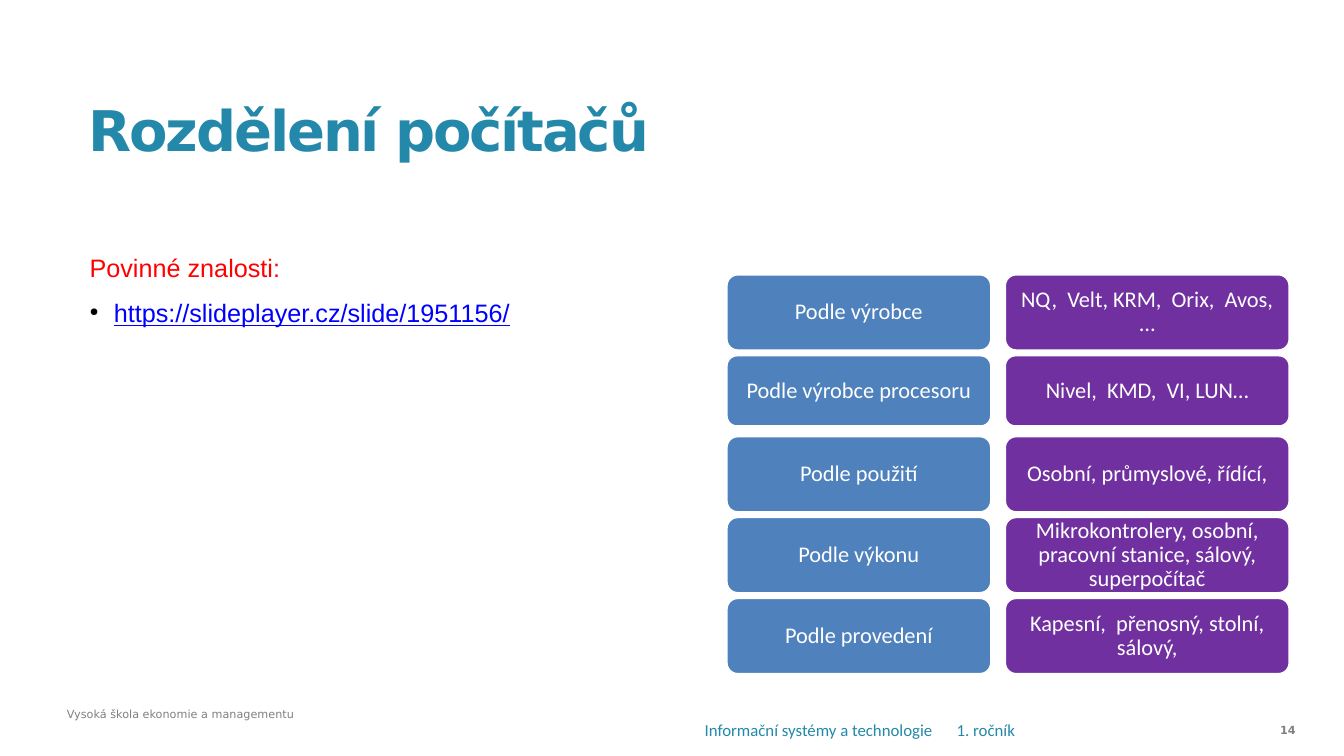
from dataclasses import dataclass

from lxml.etree import SubElement
from pptx import Presentation
from pptx.dml.color import RGBColor
from pptx.enum.shapes import MSO_SHAPE
from pptx.enum.text import MSO_ANCHOR, PP_ALIGN
from pptx.oxml.ns import qn
from pptx.util import Inches, Pt

WIDTH, HEIGHT = Inches(13.33), Inches(7.5)


@dataclass(frozen=True)
class Theme:
    teal: str = "2388A9"
    gray: str = "808080"
    red: str = "FF0000"
    link: str = "0000FF"
    black: str = "000000"
    white: str = "FFFFFF"
    blue: str = "4F81BD"
    purple: str = "7030A0"
    head: str = "DejaVu Sans"
    body: str = "Arial"
    label: str = "Calibri"
    title: int = 40
    text: int = 18
    card: int = 16
    footer: int = 12
    small: int = 8


THEME = Theme()

# Share of the slide height taken by the row, criterion, examples
ROWS = [
    (10.13, "Podle výrobce", "NQ,  Velt, KRM,  Orix,  Avos, …"),
    (9.47, "Podle výrobce procesoru", "Nivel,  KMD,  VI, LUN…"),
    (10.13, "Podle použití", "Osobní, průmyslové, řídící,"),
    (10.13, "Podle výkonu",
     "Mikrokontrolery, osobní, pracovní stanice, sálový, superpočítač"),
    (10.13, "Podle provedení", "Kapesní,  přenosný, stolní, sálový,"),
]
TOP, STEP = 36.27, 10.7


def place(left, top, width, height):
    """Turn percentages of the slide into lengths."""
    return (int(WIDTH * left / 100), int(HEIGHT * top / 100),
            int(WIDTH * width / 100), int(HEIGHT * height / 100))


def style(para, face, size, color, bold=False, align=PP_ALIGN.LEFT, lead=None):
    para.alignment = align
    if lead:
        para.line_spacing = lead
    for run in para.runs:
        run.font.name = face
        run.font.size = Pt(size)
        run.font.bold = bold
        run.font.color.rgb = RGBColor.from_string(color)


def add_text(slide, area, text, anchor=MSO_ANCHOR.MIDDLE, wrap=True):
    frame = slide.shapes.add_textbox(*place(*area)).text_frame
    frame.word_wrap = wrap
    frame.vertical_anchor = anchor
    frame.text = text
    return frame


def add_bullet(para, color):
    props = para._p.get_or_add_pPr()
    indent = Inches(0.24)
    props.set("marL", str(indent))
    props.set("indent", str(-indent))
    tint = SubElement(props, qn("a:buClr"))
    SubElement(tint, qn("a:srgbClr"), val=color)
    SubElement(props, qn("a:buSzPct"), val="45000")
    SubElement(props, qn("a:buChar"), char="●")


def add_title(slide):
    frame = add_text(slide, (6.6, 15.2, 92.35, 4.8), "Rozdělení počítačů")
    frame.margin_left = frame.margin_right = 0
    frame.margin_top = frame.margin_bottom = 0
    para = frame.paragraphs[0]
    style(para, THEME.head, THEME.title, THEME.teal, bold=True, lead=0.9)
    para.runs[0].font._element.set("spc", "-150")


def add_body(slide):
    frame = add_text(slide, (5.93, 30.67, 90.1, 34.8),
                     "Povinné znalosti:\nhttps://slideplayer.cz/slide/1951156/",
                     MSO_ANCHOR.TOP)
    intro, source = frame.paragraphs
    style(intro, THEME.body, THEME.text, THEME.red, lead=1.5)
    add_bullet(source, THEME.black)
    style(source, THEME.body, THEME.text, THEME.link, lead=1.5)
    source.runs[0].font.underline = True


def add_card(slide, area, text, color):
    card = slide.shapes.add_shape(MSO_SHAPE.ROUNDED_RECTANGLE, *place(*area))
    card.shadow.inherit = False
    card.adjustments[0] = 0.15
    card.fill.solid()
    card.fill.fore_color.rgb = RGBColor.from_string(color)
    card.line.color.rgb = RGBColor.from_string(THEME.white)
    card.line.width = Pt(2)
    frame = card.text_frame
    frame.word_wrap = True
    frame.vertical_anchor = MSO_ANCHOR.MIDDLE
    frame.margin_left = frame.margin_right = Inches(0.11)
    frame.margin_top = frame.margin_bottom = Inches(0.07)
    frame.text = text
    style(frame.paragraphs[0], THEME.label, THEME.card, THEME.white,
          align=PP_ALIGN.CENTER, lead=0.9)


def add_cards(slide):
    for row, (height, kind, sample) in enumerate(ROWS):
        top = TOP + STEP * row
        add_card(slide, (54.04, top, 19.73, height), kind, THEME.blue)
        add_card(slide, (74.75, top, 21.22, height), sample, THEME.purple)


def add_footer(slide):
    course = add_text(slide, (51.69, 94.53, 26.18, 4.13),
                      "Informační systémy a technologie\t1. ročník")
    style(course.paragraphs[0], THEME.label, THEME.footer, THEME.teal)
    number = add_text(slide, (90.85, 94.53, 6.3, 4.13), "14")
    style(number.paragraphs[0], THEME.head, THEME.small, THEME.gray,
          bold=True, align=PP_ALIGN.RIGHT)
    school = add_text(slide, (4.2, 92.93, 18.45, 3.07),
                      "Vysoká škola ekonomie a managementu",
                      MSO_ANCHOR.TOP, wrap=False)
    style(school.paragraphs[0], THEME.head, THEME.small, THEME.gray,
          align=PP_ALIGN.RIGHT)


def main():
    deck = Presentation()
    deck.slide_width, deck.slide_height = WIDTH, HEIGHT
    slide = deck.slides.add_slide(deck.slide_layouts[6])
    add_title(slide)
    add_body(slide)
    add_cards(slide)
    add_footer(slide)
    deck.save("out.pptx")


if __name__ == "__main__":
    main()
